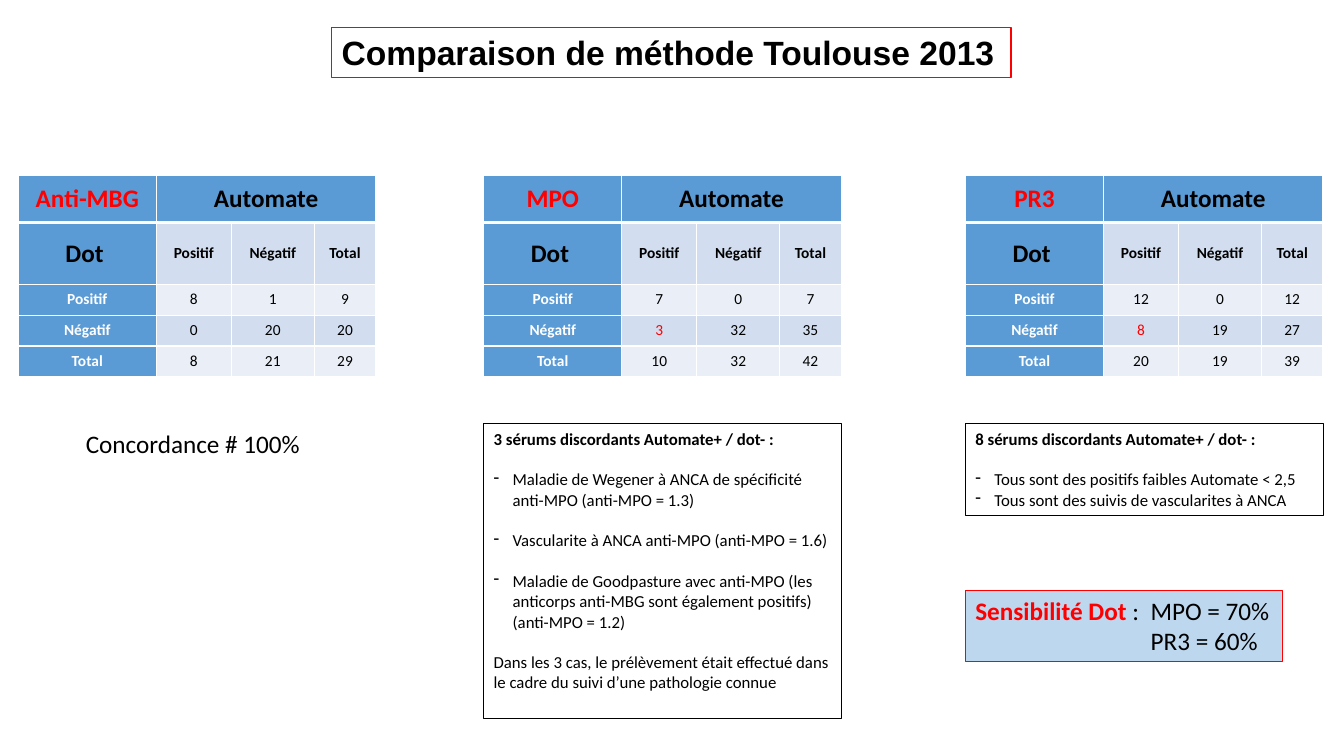
"""Build the Toulouse 2013 method comparison slide."""
from dataclasses import dataclass
from typing import Optional

from pptx import Presentation
from pptx import util as u
from pptx.dml.color import RGBColor
from pptx.enum import shapes, text
from pptx.oxml.xmlchemy import OxmlElement


@dataclass(frozen=True)
class Theme:
    """Colours, fonts and type sizes of the slide."""
    red: str = "FF0000"
    black: str = "000000"
    white: str = "FFFFFF"
    header: str = "5B9BD5"
    band_dark: str = "D2DEEF"
    band_light: str = "EAEFF7"
    highlight: str = "BDD7EE"
    body_font: str = "Calibri"
    title_font: str = "Arial"
    title: int = 24
    large: int = 18
    note: int = 12
    cell: int = 11


T = Theme()


@dataclass(frozen=True)
class Run:
    """A stretch of text in one style."""
    text: str
    size: float = T.note
    bold: bool = False
    color: str = T.black
    font: str = T.body_font


@dataclass(frozen=True)
class Para:
    """A paragraph with its spacing, indent and alignment."""
    runs: tuple[Run, ...]
    gap: float = 0
    bullet: bool = False
    left: float = 0
    centred: bool = False


@dataclass(frozen=True)
class Box:
    """A rectangle of text, measured in centimetres."""
    left: float
    top: float
    width: float
    height: float
    paras: tuple[Para, ...]
    line: Optional[str] = None
    fill: Optional[str] = None


@dataclass(frozen=True)
class Comparison:
    """A contingency table for one antibody."""
    left: float
    antibody: str
    counts: tuple[tuple[int, ...], ...]
    discordant: bool


COLUMNS = (3.48, 1.89, 2.09, 1.55)
ROWS = (1.19, 1.55, 0.78, 0.78, 0.78)
LABELS = ("Positif", "Négatif", "Total")
TABLE_TOP, NOTE_TOP, NOTE_WIDTH = 4.42, 10.67, 9.02
MPO_LEFT, PR3_LEFT = 12.19, 24.33
LINE_GAP, HANG = 0.52, 0.48

COMPARISONS = (
    Comparison(0.46, "Anti-MBG", ((8, 1, 9), (0, 20, 20), (8, 21, 29)), False),
    Comparison(MPO_LEFT, "MPO", ((7, 0, 7), (3, 32, 35), (10, 32, 42)), True),
    Comparison(PR3_LEFT, "PR3", ((12, 0, 12), (8, 19, 27), (20, 19, 39)), True),
)


def plain(words: str, gap: float = 0, bullet: bool = False) -> Para:
    """Return a paragraph of note text."""
    return Para((Run(words),), gap, bullet)


def heading(count: int) -> Para:
    """Return the bold first line of a note."""
    return Para((Run(f"{count} sérums discordants\u00a0Automate+ / dot- :", bold=True),))


BOXES = (
    Box(8.36, 0.69, 17.12, 1.27,
        (Para((Run("Comparaison de méthode Toulouse 2013", T.title, True, font=T.title_font),)),),
        T.red),
    Box(1.8, NOTE_TOP, 6.12, 1.02,
        (Para((Run("Concordance\u00a0# 100%", T.large),), centred=True),)),
    Box(MPO_LEFT, NOTE_TOP, NOTE_WIDTH, 7.44, (
        heading(3),
        plain("Maladie de Wegener à ANCA de spécificité anti-MPO (anti-MPO = 1.3)", LINE_GAP, True),
        plain("Vascularite à ANCA anti-MPO (anti-MPO = 1.6)", LINE_GAP, True),
        plain("Maladie de Goodpasture avec anti-MPO (les anticorps anti-MBG sont "
              "également positifs) (anti-MPO = 1.2)", LINE_GAP, True),
        plain("Dans les 3 cas, le prélèvement était effectué dans le cadre du suivi "
              "d’une pathologie connue", LINE_GAP),
    ), T.black),
    Box(PR3_LEFT, NOTE_TOP, NOTE_WIDTH, 2.31, (
        heading(8),
        plain("Tous sont des positifs faibles Automate < 2,5", LINE_GAP, True),
        plain("Tous sont des suivis de vascularites à ANCA", bullet=True),
    ), T.black),
    Box(PR3_LEFT, 14.88, 8.0, 1.8, (
        Para((Run("Sensibilité Dot ", T.large, True, T.red), Run(":  MPO = 70%", T.large))),
        Para((Run("PR3 = 60%", T.large),), left=4.42),
    ), T.red, T.highlight),
)


def write(tf, paras: tuple[Para, ...]) -> None:
    """Fill a text frame run by run."""
    for i, para in enumerate(paras):
        p = tf.paragraphs[0] if i == 0 else tf.add_paragraph()
        p.alignment = text.PP_ALIGN.CENTER if para.centred else text.PP_ALIGN.LEFT
        p.space_before = u.Cm(para.gap)
        pPr = p._p.get_or_add_pPr()
        if para.left:
            pPr.set("marL", str(u.Cm(para.left)))
        if para.bullet:
            pPr.set("marL", str(u.Cm(HANG)))
            pPr.set("indent", str(-u.Cm(HANG)))
            bullet = OxmlElement("a:buChar")
            bullet.set("char", "-")
            pPr.append(bullet)
        for run in para.runs:
            r = p.add_run()
            r.text = run.text
            r.font.name = run.font
            r.font.size = u.Pt(run.size)
            r.font.bold = run.bold
            r.font.color.rgb = RGBColor.from_string(run.color)


def add_box(s, box: Box) -> None:
    """Draw a text rectangle with its optional fill and line."""
    sp = s.shapes.add_shape(shapes.MSO_SHAPE.RECTANGLE, u.Cm(box.left), u.Cm(box.top),
                            u.Cm(box.width), u.Cm(box.height))
    sp.shadow.inherit = False
    if box.fill:
        sp.fill.solid()
        sp.fill.fore_color.rgb = RGBColor.from_string(box.fill)
    else:
        sp.fill.background()
    if box.line:
        sp.line.color.rgb = RGBColor.from_string(box.line)
        sp.line.width = u.Pt(0.75)
    else:
        sp.line.fill.background()
    tf = sp.text_frame
    tf.word_wrap = True
    tf.vertical_anchor = text.MSO_ANCHOR.TOP
    write(tf, box.paras)


def add_borders(cell, row: int) -> None:
    """Give a cell white borders, thicker under the header row."""
    thick = {(0, "B"), (1, "T")}
    tcPr = cell._tc.get_or_add_tcPr()
    for side in "LRTB":
        ln = OxmlElement(f"a:ln{side}")
        ln.set("w", str(u.Pt(3 if (row, side) in thick else 1)))
        fill, color = OxmlElement("a:solidFill"), OxmlElement("a:srgbClr")
        color.set("val", T.white)
        fill.append(color)
        ln.append(fill)
        tcPr.append(ln)


def cell_run(c: Comparison, row: int, col: int, words: str) -> Run:
    """Return the styled text of one table cell."""
    if row == 0 or (row, col) == (1, 0):
        return Run(words, T.large, True, T.red if (row, col) == (0, 0) else T.black)
    if col == 0:
        return Run(words, T.cell, True, T.white)
    marked = c.discordant and (row, col) == (3, 1)
    return Run(words, T.cell, row == 1, T.red if marked else T.black)


def add_comparison(s, c: Comparison) -> None:
    """Draw one contingency table."""
    grid = [(c.antibody, "Automate", "", ""), ("Dot ", *LABELS)]
    grid += [(label, *map(str, row)) for label, row in zip(LABELS, c.counts)]
    table = s.shapes.add_table(len(ROWS), len(COLUMNS), u.Cm(c.left), u.Cm(TABLE_TOP),
                               u.Cm(sum(COLUMNS)), u.Cm(sum(ROWS))).table
    table.first_row = table.horz_banding = False
    for column, width in zip(table.columns, COLUMNS):
        column.width = u.Cm(width)
    for i, (row, height) in enumerate(zip(grid, ROWS)):
        table.rows[i].height = u.Cm(height)
        for j, words in enumerate(row):
            cell = table.cell(i, j)
            add_borders(cell, i)
            band = T.band_dark if i % 2 else T.band_light
            cell.fill.solid()
            cell.fill.fore_color.rgb = RGBColor.from_string(T.header if 0 in (i, j) else band)
            cell.margin_left = cell.margin_right = u.Cm(0.13)
            cell.margin_top = cell.margin_bottom = 0
            cell.vertical_anchor = text.MSO_ANCHOR.MIDDLE
            if words:
                write(cell.text_frame, (Para((cell_run(c, i, j, words),), centred=True),))
    table.cell(0, 1).merge(table.cell(0, 3))


def main() -> None:
    """Build and save the slide."""
    prs = Presentation()
    prs.slide_width, prs.slide_height = u.Cm(33.87), u.Cm(19.05)
    s = prs.slides.add_slide(prs.slide_layouts[6])
    for c in COMPARISONS:
        add_comparison(s, c)
    for box in BOXES:
        add_box(s, box)
    prs.save("out.pptx")


if __name__ == "__main__":
    main()
